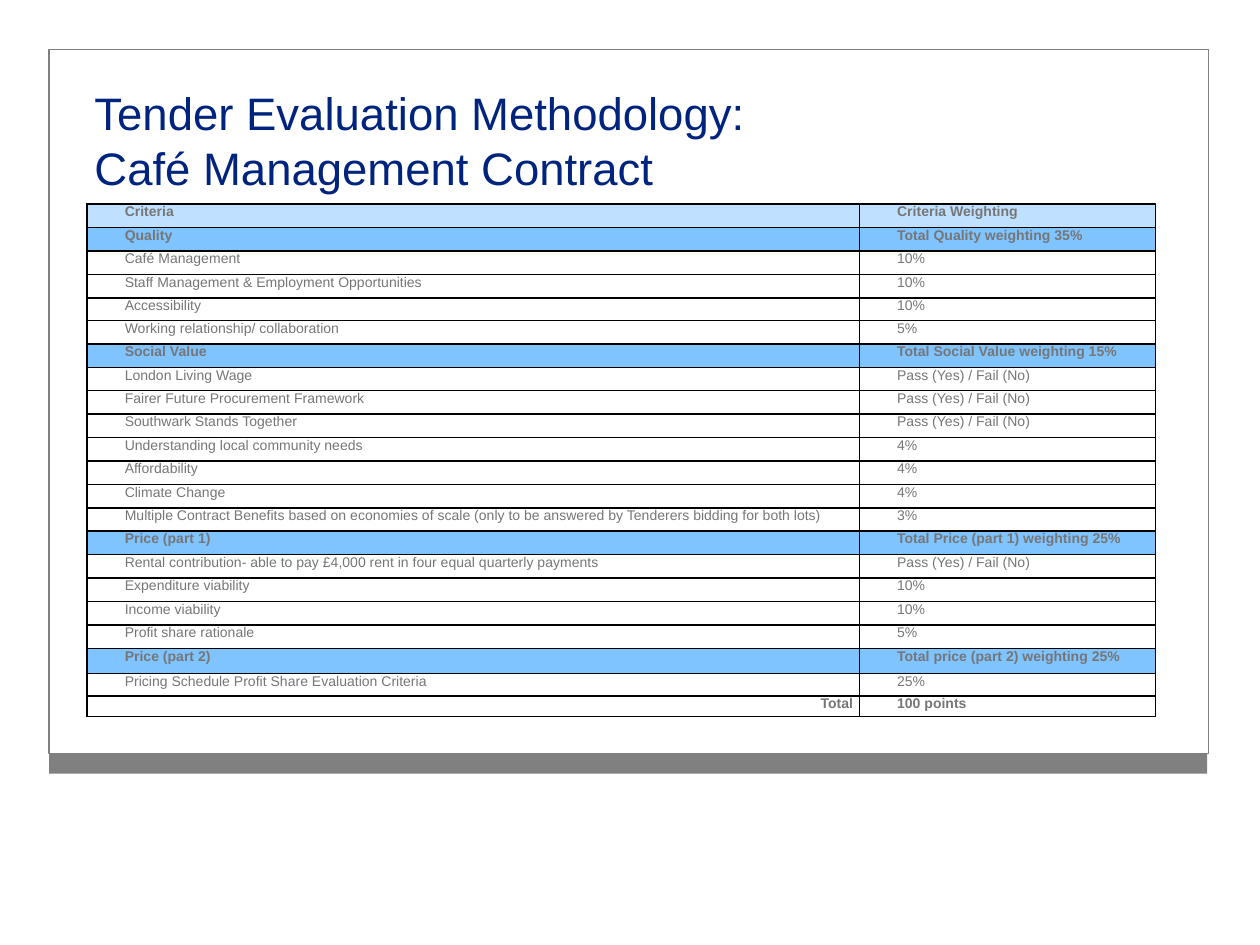
"""Build the tender evaluation slide with its criteria weighting table."""
from lxml.etree import SubElement
from pptx import Presentation
from pptx.dml.color import RGBColor
from pptx.enum.shapes import MSO_SHAPE
from pptx.enum.text import MSO_ANCHOR, PP_ALIGN
from pptx.oxml.ns import qn
from pptx.util import Inches, Pt

GREY = RGBColor(0x80, 0x80, 0x80)
TEXT_GREY = RGBColor(0x76, 0x76, 0x76)
NAVY = RGBColor(0x00, 0x24, 0x7E)
BLACK = RGBColor(0x00, 0x00, 0x00)
PALE_BLUE = RGBColor(0xBF, 0xE1, 0xFF)
SKY_BLUE = RGBColor(0x7F, 0xC3, 0xFF)
FONT = "Arial"

TITLE_LINES = ("Tender Evaluation Methodology:", "Café Management Contract")
PASS_FAIL = "Pass (Yes) / Fail (No)"
ROWS = [
    ("header", "Criteria", "Criteria Weighting"),
    ("section", "Quality", "Total Quality weighting 35%"),
    ("item", "Café Management", "10%"),
    ("item", "Staff Management & Employment Opportunities", "10%"),
    ("item", "Accessibility", "10%"),
    ("item", "Working relationship/ collaboration", "5%"),
    ("section", "Social Value", "Total Social Value weighting 15%"),
    ("item", "London Living Wage", PASS_FAIL),
    ("item", "Fairer Future Procurement Framework", PASS_FAIL),
    ("item", "Southwark Stands Together", PASS_FAIL),
    ("item", "Understanding local community needs", "4%"),
    ("item", "Affordability", "4%"),
    ("item", "Climate Change", "4%"),
    ("item", "Multiple Contract Benefits based on economies of scale "
             "(only to be answered by Tenderers bidding for both lots)", "3%"),
    ("section", "Price (part 1)", "Total Price (part 1) weighting 25%"),
    ("item", "Rental contribution- able to pay £4,000 rent in four equal quarterly payments", PASS_FAIL),
    ("item", "Expenditure viability", "10%"),
    ("item", "Income viability", "10%"),
    ("item", "Profit share rationale", "5%"),
    ("section", "Price (part 2)", "Total price (part 2) weighting 25%"),
    ("item", "Pricing Schedule Profit Share Evaluation Criteria", "25%"),
    ("total", "Total", "100 points"),
]
ROW_FILLS = {"header": PALE_BLUE, "section": SKY_BLUE}
COLUMN_WIDTHS = (6.13, 2.35)
TABLE_HEIGHT = 4.07
SPECIAL_HEIGHTS = {4: 0.18, 19: 0.2, 20: 0.18, 21: 0.16}
ROW_HEIGHT = (TABLE_HEIGHT - sum(SPECIAL_HEIGHTS.values())) / (len(ROWS) - len(SPECIAL_HEIGHTS))


def add_rectangle(page, left, top, width, height):
    box = page.shapes.add_shape(
        MSO_SHAPE.RECTANGLE, Inches(left), Inches(top), Inches(width), Inches(height))
    box.shadow.inherit = False
    return box


def add_frame(page):
    bar = add_rectangle(page, 0.39, 5.98, 9.19, 0.16)
    bar.fill.solid()
    bar.fill.fore_color.rgb = GREY
    bar.line.fill.background()
    border = add_rectangle(page, 0.39, 0.39, 9.2, 5.59)
    border.fill.background()
    border.line.color.rgb = GREY
    border.line.width = Pt(0.75)


def style_span(span, size, color, bold=False):
    span.font.name = FONT
    span.font.size = Pt(size)
    span.font.bold = bold
    span.font.color.rgb = color


def add_borders(cell):
    properties = cell._tc.get_or_add_tcPr()
    for side in ("a:lnL", "a:lnR", "a:lnT", "a:lnB"):
        line = SubElement(properties, qn(side), w=str(Pt(1)))
        SubElement(SubElement(line, qn("a:solidFill")), qn("a:srgbClr"), val=str(BLACK))


def fill_cell(cell, text, kind, align_right):
    cell.margin_left = cell.margin_right = Inches(0.05)
    cell.margin_top = cell.margin_bottom = 0
    add_borders(cell)
    if kind in ROW_FILLS:
        cell.fill.solid()
        cell.fill.fore_color.rgb = ROW_FILLS[kind]
    else:
        cell.fill.background()
    para = cell.text_frame.paragraphs[0]
    para.alignment = PP_ALIGN.RIGHT if align_right else PP_ALIGN.LEFT
    indents = para._p.get_or_add_pPr()
    indents.set("marL", str(Inches(0.55)))
    indents.set("indent", str(Inches(-0.3)))
    span = para.add_run()
    span.text = text
    style_span(span, 8, TEXT_GREY, kind != "item")


def add_criteria_table(page):
    table = page.shapes.add_table(
        len(ROWS), len(COLUMN_WIDTHS), Inches(0.69), Inches(1.62),
        Inches(sum(COLUMN_WIDTHS)), Inches(TABLE_HEIGHT)).table
    table.first_row = table.horz_banding = False
    for column, width in zip(table.columns, COLUMN_WIDTHS):
        column.width = Inches(width)
    for index, (kind, *texts) in enumerate(ROWS):
        table.rows[index].height = Inches(SPECIAL_HEIGHTS.get(index, ROW_HEIGHT))
        for column, text in enumerate(texts):
            fill_cell(table.cell(index, column), text, kind, kind == "total" and column == 0)


def add_title(page):
    box = page.shapes.add_textbox(Inches(0.75), Inches(0.68), Inches(7.17), Inches(0.39))
    frame = box.text_frame
    frame.word_wrap = True
    frame.vertical_anchor = MSO_ANCHOR.TOP
    frame.margin_left = frame.margin_right = frame.margin_top = frame.margin_bottom = 0
    para = frame.paragraphs[0]
    para.line_spacing = Pt(31)
    for index, text in enumerate(TITLE_LINES):
        if index:
            para.add_line_break()
        span = para.add_run()
        span.text = text
        style_span(span, 26, NAVY)


def main():
    deck = Presentation()
    deck.slide_width, deck.slide_height = Inches(10), Inches(7.5)
    page = deck.slides.add_slide(deck.slide_layouts[6])
    add_frame(page)
    add_criteria_table(page)
    add_title(page)
    deck.save("out.pptx")


if __name__ == "__main__":
    main()
